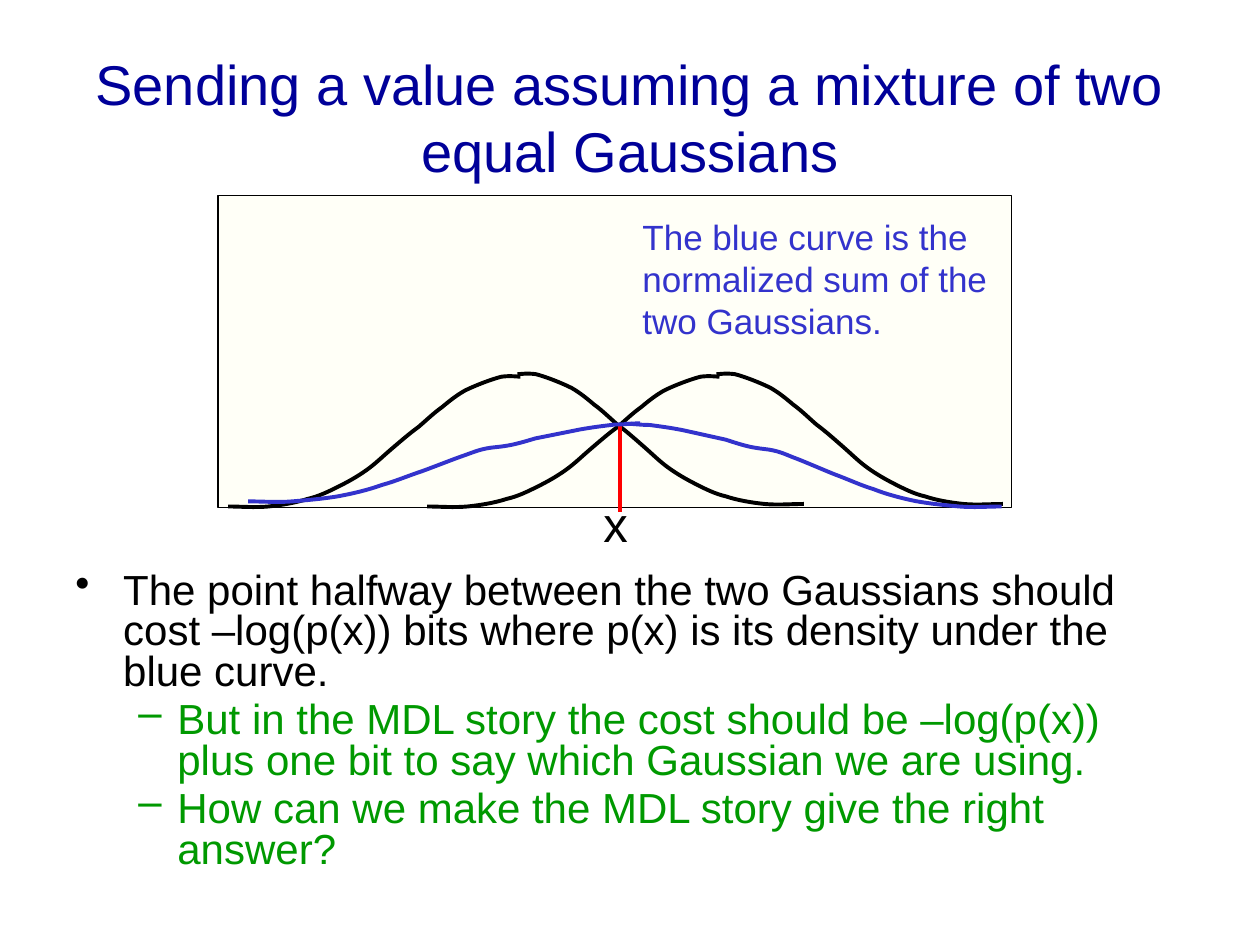
from lxml.etree import SubElement
from pptx import Presentation
from pptx.dml.color import RGBColor
from pptx.enum.shapes import MSO_CONNECTOR as Connector, MSO_SHAPE as Shape
from pptx.enum.text import MSO_ANCHOR as Anchor, PP_ALIGN as Align
from pptx.oxml.ns import qn
from pptx.util import Inches, Pt

COLORS = {
    "title": "000099",
    "text": "000000",
    "point": "009900",
    "panel": "FFFFF7",
    "mixture": "3333CC",
    "marker": "FF0000",
}

# Left flanks: a start point, then two handles and an end point per Bezier piece
GAUSSIAN_FLANK = [
    (1.81, 4.02),
    (1.91, 4.02), (2.02, 4.03), (2.13, 4.02),
    (2.23, 4.01), (2.35, 3.99), (2.44, 3.96),
    (2.53, 3.94), (2.61, 3.9), (2.69, 3.86),
    (2.77, 3.82), (2.84, 3.78), (2.91, 3.73),
    (2.98, 3.68), (3.03, 3.63), (3.1, 3.57),
    (3.17, 3.51), (3.25, 3.44), (3.32, 3.39),
    (3.39, 3.33), (3.44, 3.28), (3.51, 3.23),
    (3.57, 3.18), (3.62, 3.14), (3.69, 3.1),
    (3.77, 3.06), (3.9, 3.01), (3.98, 2.99),
    (4.05, 2.98), (4.11, 2.99), (4.13, 2.99),
]
MIXTURE_FLANK = [
    (1.97, 3.98),
    (2.09, 3.98), (2.2, 3.99), (2.32, 3.98),
    (2.44, 3.97), (2.56, 3.96), (2.68, 3.94),
    (2.79, 3.92), (2.92, 3.89), (3.03, 3.85),
    (3.14, 3.82), (3.23, 3.78), (3.35, 3.74),
    (3.46, 3.7), (3.61, 3.64), (3.7, 3.61),
    (3.78, 3.58), (3.81, 3.57), (3.86, 3.56),
    (3.91, 3.55), (3.95, 3.55), (4.01, 3.54),
    (4.08, 3.53), (4.15, 3.51), (4.25, 3.48),
    (4.35, 3.46), (4.5, 3.43), (4.6, 3.41),
    (4.71, 3.39), (4.8, 3.38), (4.88, 3.37),
    (4.96, 3.37), (5.02, 3.36), (5.08, 3.36),
]
GAUSSIAN_GAP = 1.58


def rgb(name):
    return RGBColor.from_string(COLORS[name])


def add_run(paragraph, text, size, color):
    run = paragraph.add_run()
    run.text = text
    run.font.name = "Arial"
    run.font.size = Pt(size)
    run.font.color.rgb = rgb(color)


def add_text_frame(slide, left, top, width, height):
    frame = slide.shapes.add_textbox(
        Inches(left), Inches(top), Inches(width), Inches(height)).text_frame
    frame.word_wrap = True
    return frame


def add_label(slide, box, text, size, color):
    frame = add_text_frame(slide, *box)
    add_run(frame.paragraphs[0], text, size, color)
    return frame


def add_bullet(paragraph, text, color, mark, margin, hanging, level):
    paragraph.level = level
    paragraph.line_spacing = 0.8
    paragraph.space_before = Pt(4.8)
    add_run(paragraph, text, 24, color)
    properties = paragraph._p.get_or_add_pPr()
    properties.set("marL", str(Inches(margin)))
    properties.set("indent", str(-Inches(hanging)))
    SubElement(properties, qn("a:buChar")).set("char", mark)


def add_panel(slide):
    panel = slide.shapes.add_shape(
        Shape.RECTANGLE, Inches(1.73), Inches(1.55), Inches(6.3), Inches(2.48))
    panel.shadow.inherit = False
    panel.fill.solid()
    panel.fill.fore_color.rgb = rgb("panel")
    panel.line.color.rgb = rgb("text")
    panel.line.width = Pt(0.75)


def add_curve(slide, points, color):
    start, *rest = [(Inches(x), Inches(y)) for x, y in points]
    builder = slide.shapes.build_freeform(*start)
    builder.add_line_segments(rest, close=False)
    curve = builder.convert_to_shape()
    curve.shadow.inherit = False
    curve.fill.background()
    curve.line.color.rgb = rgb(color)
    curve.line.width = Pt(2.25)
    # Turn every three line segments into one cubic Bezier piece
    segments = curve._element.xpath(".//a:lnTo")
    outline = segments[0].getparent()
    for i in range(0, len(segments), 3):
        piece = SubElement(outline, qn("a:cubicBezTo"))
        for segment in segments[i:i + 3]:
            piece.append(segment[0])
            outline.remove(segment)


def shift(points, dx):
    return [(x + dx, y) for x, y in points]


def mirror(points, right, bottom, x_scale, y_scale):
    """Reflect a left flank into a right flank that starts at (right, bottom)."""
    x0, y0 = points[0]
    return [(right - (x - x0) * x_scale, bottom + (y - y0) * y_scale)
            for x, y in points]


def add_marker(slide):
    marker = slide.shapes.add_connector(
        Connector.STRAIGHT, Inches(4.92), Inches(3.36), Inches(4.92), Inches(4.06))
    marker.line.color.rgb = rgb("marker")
    marker.line.width = Pt(2.25)
    SubElement(marker._element.spPr, qn("a:effectLst"))


def main():
    prs = Presentation()
    prs.slide_width, prs.slide_height = Inches(10), Inches(7.5)
    slide = prs.slides.add_slide(prs.slide_layouts[6])

    # Title
    title = add_label(slide, (0.5, 0.3, 9, 1.25),
                      "Sending a value assuming a mixture of two equal Gaussians",
                      32, "title")
    title.vertical_anchor = Anchor.MIDDLE
    title.paragraphs[0].alignment = Align.CENTER

    # Bullets
    body = add_text_frame(slide, 0.5, 4.5, 9, 2.68)
    add_bullet(body.paragraphs[0],
               "The point halfway between the two Gaussians should cost –log(p(x)) "
               "bits where p(x) is its density under the blue curve.",
               "text", "•", 0.38, 0.38, 0)
    for point in (
        "But in the MDL story the cost should be –log(p(x)) plus one bit to say "
        "which Gaussian we are using.",
        "How can we make the MDL story give the right answer?",
    ):
        add_bullet(body.add_paragraph(), point, "point", "–", 0.81, 0.31, 1)

    # Two equal Gaussians
    add_panel(slide)
    falling_flank = mirror(GAUSSIAN_FLANK, 6.38, 4, 0.98, 1)
    for offset in (0, GAUSSIAN_GAP):
        add_curve(slide, shift(GAUSSIAN_FLANK, offset), "text")
        add_curve(slide, shift(falling_flank, offset), "text")

    # Halfway point
    add_marker(slide)
    add_label(slide, (4.69, 3.87, 0.51, 0.57), "x", 28, "text")

    # Normalized sum
    add_curve(slide, MIXTURE_FLANK, "mixture")
    add_curve(slide, mirror(MIXTURE_FLANK, 7.95, 4.02, 0.96, 1.06), "mixture")
    add_label(slide, (5, 1.66, 2.99, 1.1),
              "The blue curve is the normalized sum of the two Gaussians.",
              20, "mixture")

    prs.save("out.pptx")


if __name__ == "__main__":
    main()
